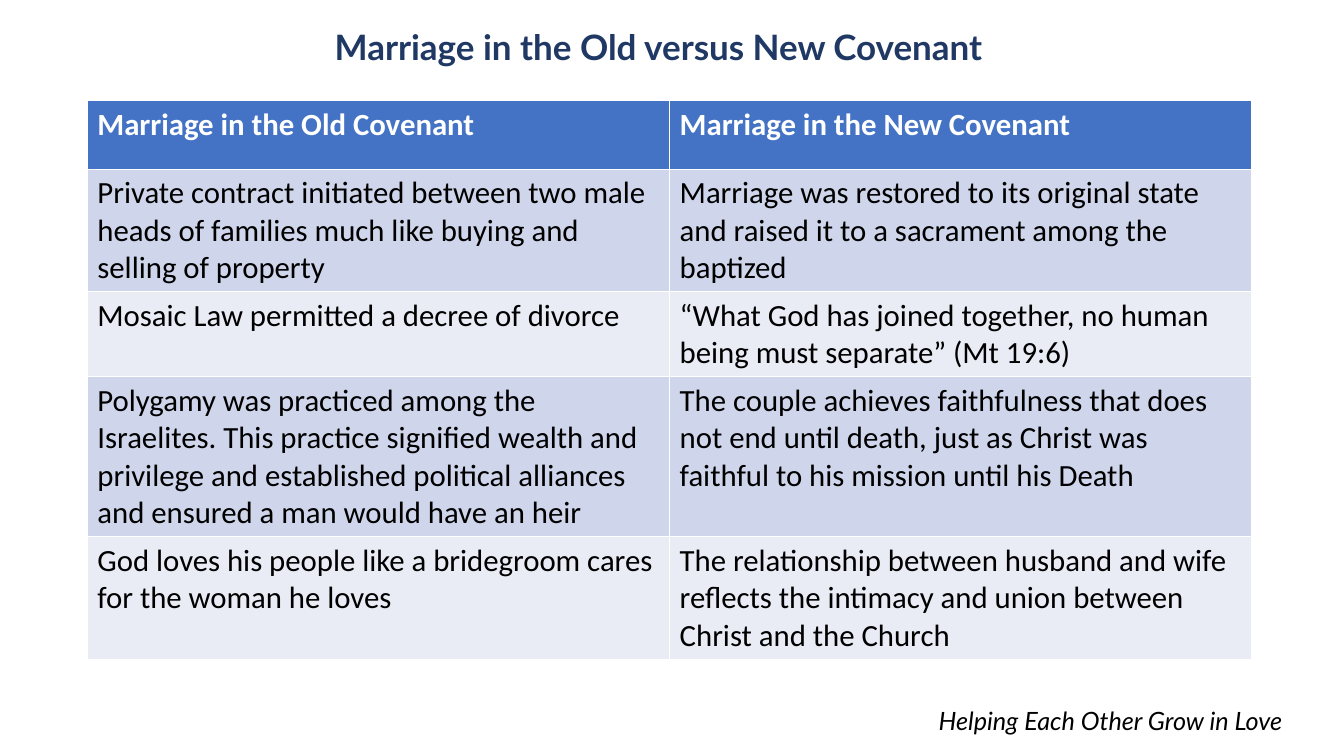
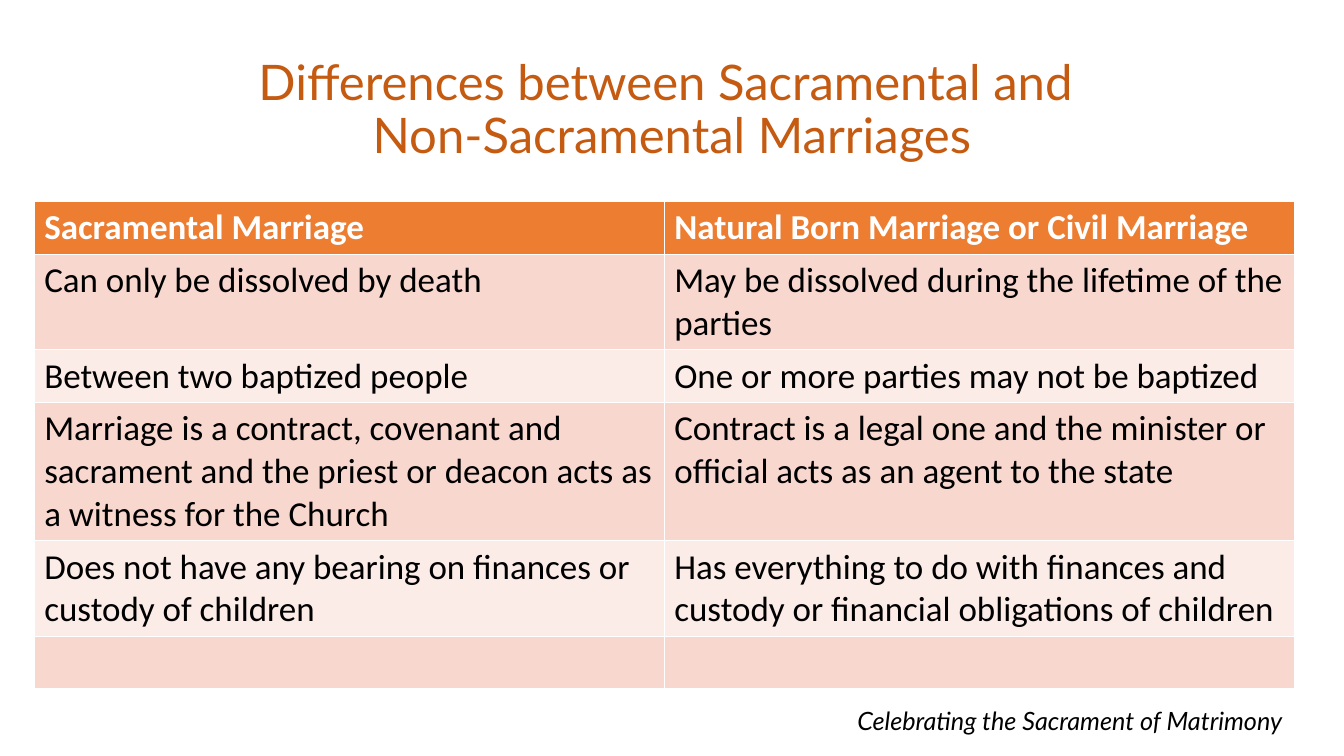
from copy import deepcopy

from pptx import Presentation
from pptx.dml.color import RGBColor
from pptx.enum.text import MSO_ANCHOR, MSO_AUTO_SIZE, PP_ALIGN
from pptx.util import Inches, Pt

TITLE_ONLY = 5
HEADING_FONT = "Lato"
TABLE_FONT = "Calibri"
BLACK = "000000"
WHITE = "FFFFFF"
# Each palette: title, header fill, odd row fill, even row fill
BLUE = ("203864", "4472C4", "CFD5EA", "E9EBF5")
ORANGE = ("C55A11", "ED7D31", "F8D7CE", "FCECE8")
# Left, top, width and height in percent of the slide
FOOTER_AREA = (49.88, 92.67, 46.28, 5.33)


def color(hex_code):
    return RGBColor.from_string(hex_code)


def write(frame, text, font, size, fill, bold=False, italic=False,
          align=PP_ALIGN.LEFT, spacing=1.0):
    """Fill a text frame with one paragraph; a newline becomes a line break."""
    para = frame.paragraphs[0]
    para.alignment = align
    para.line_spacing = spacing
    for number, line in enumerate(text.split("\n")):
        if number:
            para.add_line_break()
            line_break = para._p[-1]
            line_break.append(deepcopy(span.font._element))
        span = para.add_run()
        span.text = line
        span.font.name = font
        span.font.size = Pt(size)
        span.font.bold = bold
        span.font.italic = italic
        span.font.color.rgb = color(fill)


class ComparisonDeck:
    """Holds the presentation, the current page and its palette."""

    def __init__(self):
        self.deck = Presentation()
        self.deck.slide_width = Inches(13.33)
        self.deck.slide_height = Inches(7.5)

    def across(self, percent):
        return round(self.deck.slide_width * percent / 100)

    def down(self, percent):
        return round(self.deck.slide_height * percent / 100)

    def place(self, area):
        left, top, width, height = area
        return (self.across(left), self.down(top),
                self.across(width), self.down(height))

    def add_page(self, palette):
        self.page = self.deck.slides.add_slide(self.deck.slide_layouts[TITLE_ONLY])
        self.title_color, self.header_fill, *self.row_fills = palette

    def add_title(self, text, area, size, anchor, bold=False, spacing=1.0):
        title = self.page.shapes.title
        title.left, title.top, title.width, title.height = self.place(area)
        frame = title.text_frame
        frame.auto_size = MSO_AUTO_SIZE.NONE
        frame.vertical_anchor = anchor
        write(frame, text, HEADING_FONT, size, self.title_color,
              bold=bold, align=PP_ALIGN.CENTER, spacing=spacing)

    def add_table(self, rows, left, top, width, row_height, size):
        """Place a table whose rows are at least row_height tall."""
        area = (left, top, width, row_height * len(rows))
        table = self.page.shapes.add_table(
            len(rows), len(rows[0]), *self.place(area)).table
        for row, texts in enumerate(rows):
            is_header = row == 0
            for column, text in enumerate(texts):
                cell = table.cell(row, column)
                cell.fill.solid()
                cell.fill.fore_color.rgb = color(
                    self.header_fill if is_header else self.row_fills[(row - 1) % 2])
                if text:
                    write(cell.text_frame, text, TABLE_FONT, size,
                          WHITE if is_header else BLACK, bold=is_header)

    def add_footer(self, text):
        box = self.page.shapes.add_textbox(*self.place(FOOTER_AREA))
        box.text_frame.word_wrap = True
        box.text_frame.auto_size = MSO_AUTO_SIZE.SHAPE_TO_FIT_TEXT
        write(box.text_frame, text, HEADING_FONT, 18, BLACK,
              italic=True, align=PP_ALIGN.RIGHT)


COVENANT_ROWS = [
    ("Marriage in the Old Covenant", "Marriage in the New Covenant"),
    ("Private contract initiated between two male heads of families much like "
     "buying and selling of property",
     "Marriage was restored to its original state and raised it to a sacrament "
     "among the baptized"),
    ("Mosaic Law permitted a decree of divorce",
     "“What God has joined together, no human being must separate” (Mt 19:6)"),
    ("Polygamy was practiced among the Israelites. This practice signified wealth "
     "and privilege and established political alliances and ensured a man would "
     "have an heir",
     "The couple achieves faithfulness that does not end until death, just as "
     "Christ was faithful to his mission until his Death"),
    ("God loves his people like a bridegroom cares for the woman he loves",
     "The relationship between husband and wife reflects the intimacy and union "
     "between Christ and the Church"),
]

SACRAMENT_ROWS = [
    ("Sacramental Marriage", "Natural Born Marriage or Civil Marriage"),
    ("Can only be dissolved by death",
     "May be dissolved during the lifetime of the parties"),
    ("Between two baptized people", "One or more parties may not be baptized"),
    ("Marriage is a contract, covenant and sacrament and the priest or deacon acts "
     "as a witness for the Church",
     "Contract is a legal one and the minister or official acts as an agent to "
     "the state"),
    ("Does not have any bearing on finances or custody of children",
     "Has everything to do with finances and custody or financial obligations "
     "of children"),
    ("", ""),
]


def main():
    slides = ComparisonDeck()

    slides.add_page(BLUE)
    slides.add_title("Marriage in the Old versus New Covenant ",
                     (11.6, 2.7, 75.4, 6.9), 25, MSO_ANCHOR.TOP, bold=True)
    slides.add_table(COVENANT_ROWS, left=6.5, top=13.33, width=86.65,
                     row_height=9.07, size=22)
    slides.add_footer("Helping Each Other Grow in Love")

    slides.add_page(ORANGE)
    slides.add_title("Differences between Sacramental and \nNon-Sacramental Marriages",
                     (5.2, 5.07, 89.6, 19.33), 35, MSO_ANCHOR.MIDDLE, spacing=0.9)
    slides.add_table(SACRAMENT_ROWS, left=2.55, top=26.67, width=93.75,
                     row_height=6.93, size=25)
    slides.add_footer("Celebrating the Sacrament of Matrimony")

    slides.deck.save("out.pptx")


if __name__ == "__main__":
    main()
